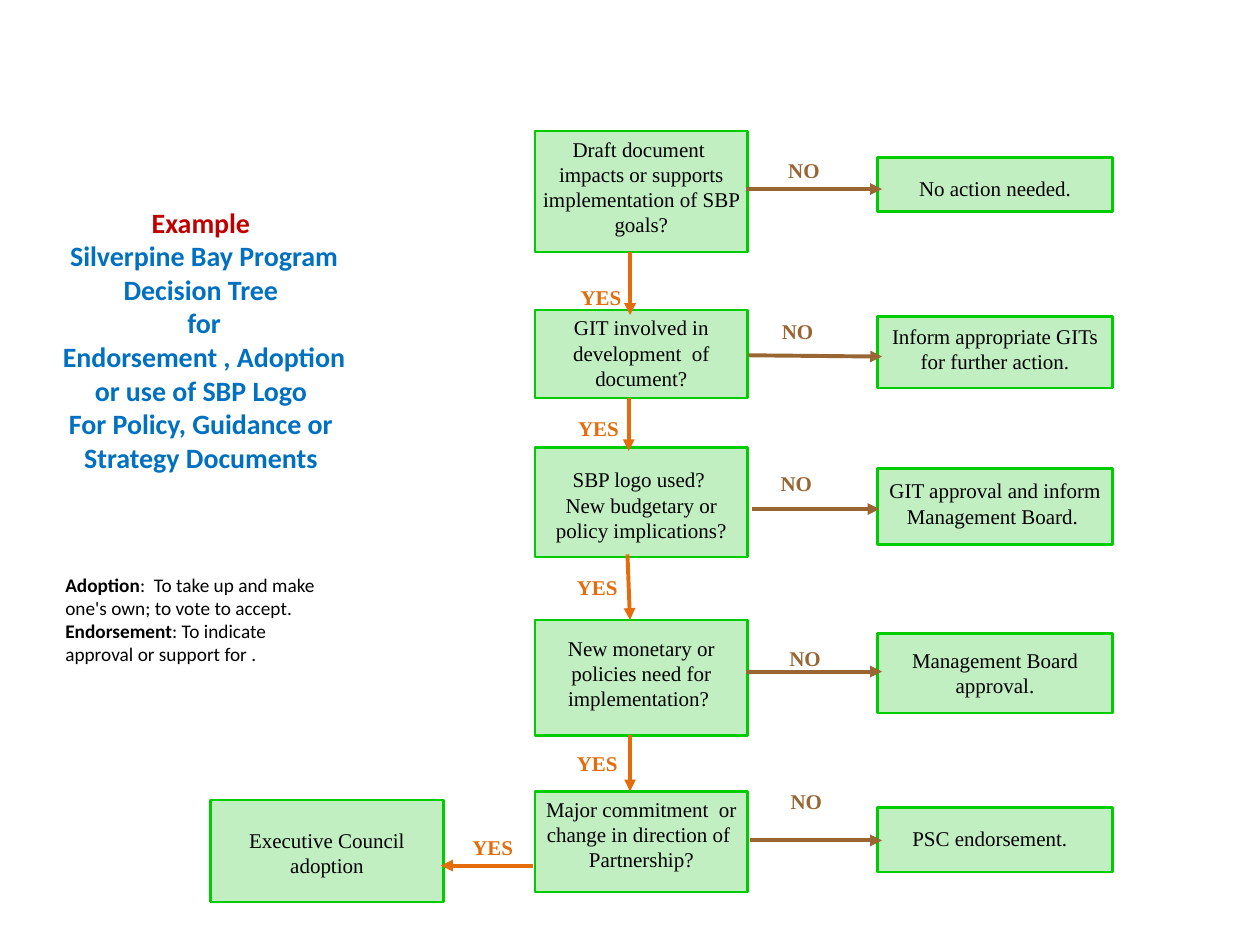
import dataclasses
import pptx
import pptx.dml.color
import pptx.enum.shapes
import pptx.enum.text
import pptx.oxml
import pptx.oxml.ns
import pptx.util

COLUMNS, ROWS = 100, 75
SLIDE_WIDTH, SLIDE_HEIGHT = pptx.util.Inches(10), pptx.util.Inches(7.5)


@dataclasses.dataclass(frozen=True)
class Theme:
    fill: str = "33CC33"
    fill_alpha: int = 30
    border: str = "00CC00"
    ink: str = "000000"
    yes: str = "E46C0A"
    no: str = "996633"
    example: str = "C00000"
    title: str = "0070C0"
    chart_font: str = "Times New Roman"
    side_font: str = "Calibri"
    chart_size: float = 12
    title_size: float = 16
    note_size: float = 11
    border_width: float = 1.5
    arrow_width: float = 2.25
    inset: float = 0.04


THEME = Theme()
CENTER = pptx.enum.text.PP_ALIGN.CENTER
LEFT = pptx.enum.text.PP_ALIGN.LEFT
QUESTION_COLUMN, QUESTION_WIDTH = 42.45, 16.9
ANSWER_COLUMN, ANSWER_WIDTH = 69.65, 18.65
YES_COLUMN, FLOW_COLUMN = 45, 50
LABEL_WIDTH, LABEL_HEIGHT = 4.8, 3.5

QUESTIONS = [
    (10.4, 9.6, 0, ["Draft document ", "impacts or supports implementation of SBP goals?"]),
    (24.6, 7, 0, ["GIT involved in development  of document?"]),
    (35.5, 8.7, 7, ["SBP logo used? ", "New budgetary or policy implications?"]),
    (49.2, 9.2, 5, ["New monetary or policies need for implementation? "]),
    (62.8, 8, 0, ["Major commitment  or change in direction of ", "Partnership?"]),
]
ANSWERS = [
    (12.5, 4.3, 6, ["No action needed."]),
    (25.1, 5.7, 1, ["Inform appropriate GITs for further action."]),
    (37.2, 6, 2, ["GIT approval and inform Management Board. "]),
    (50.3, 6.3, 4, ["Management Board approval."]),
    (64.1, 5.1, 6, ["PSC endorsement.  "]),
]
NO_LABELS = [(61.4, 12.1), (60.9, 24.9), (60.8, 36.9), (61.5, 50.8), (61.6, 62.2)]
NO_ARROWS = [
    (59.2, 15, 70, 15),
    (59.4, 28.2, 70, 28.3),
    (59.7, 40.4, 69.8, 40.4),
    (59.2, 53.3, 70, 53.3),
    (59.5, 66.7, 70, 66.7),
]
YES_LABELS = [(45.3, 22.2), (45.1, 32.6), (YES_COLUMN, 45.2), (YES_COLUMN, 59.2), (36.7, 65.8)]
YES_ARROWS = [
    (FLOW_COLUMN, 20, FLOW_COLUMN, 25),
    (49.9, 31.6, 49.9, 35.8),
    (49.8, 44, FLOW_COLUMN, 49.2),
    (FLOW_COLUMN, 58.3, FLOW_COLUMN, 62.8),
    (42.3, 68.7, 35, 68.7),
]
TITLE_LINES = [
    "Example ",
    "Silverpine Bay Program",
    "Decision Tree ",
    " for ",
    "Endorsement , Adoption",
    "or use of SBP Logo ",
    "For Policy, Guidance or ",
    "Strategy Documents ",
]
DEFINITIONS = [
    ("Adoption", ":  To take up and make one's own; to vote to accept."),
    ("Endorsement", ": To indicate approval or support for ."),
]


def grid(column, row):
    return round(SLIDE_WIDTH * column / COLUMNS), round(SLIDE_HEIGHT * row / ROWS)


def rgb(color):
    return pptx.dml.color.RGBColor.from_string(color)


def style_run(run, font, size, color, bold=False):
    run.font.name = font
    run.font.size = pptx.util.Pt(size)
    run.font.color.rgb = rgb(color)
    run.font.bold = bold


def set_insets(frame, lead=0):
    side = pptx.util.Inches(THEME.inset)
    frame.margin_left = frame.margin_right = frame.margin_bottom = side
    frame.margin_top = side + pptx.util.Pt(lead * 1.2)


def write_lines(frame, lines, font, size, color, bold=False):
    frame.word_wrap = True
    frame.vertical_anchor = pptx.enum.text.MSO_ANCHOR.TOP
    frame.text = "\n".join(lines)
    for paragraph in frame.paragraphs:
        paragraph.alignment = CENTER
        for run in paragraph.runs:
            style_run(run, font, size, color, bold)


def add_box(slide, column, width, row, height, lead, lines):
    box = slide.shapes.add_shape(
        pptx.enum.shapes.MSO_SHAPE.RECTANGLE, *grid(column, row), *grid(width, height)
    )
    box.shadow.inherit = False
    box.fill.solid()
    box.fill.fore_color.rgb = rgb(THEME.fill)
    tint = box.fill._xPr.find(".//" + pptx.oxml.ns.qn("a:srgbClr"))
    alpha = pptx.oxml.parse_xml(
        f'<a:alpha {pptx.oxml.ns.nsdecls("a")} val="{THEME.fill_alpha * 1000}"/>'
    )
    tint.append(alpha)
    box.line.color.rgb = rgb(THEME.border)
    box.line.width = pptx.util.Pt(THEME.border_width)
    set_insets(box.text_frame, lead)
    write_lines(box.text_frame, lines, THEME.chart_font, THEME.chart_size, THEME.ink)


def add_label(slide, column, row, word, color):
    label = slide.shapes.add_textbox(*grid(column, row), *grid(LABEL_WIDTH, LABEL_HEIGHT))
    set_insets(label.text_frame)
    write_lines(label.text_frame, [word], THEME.chart_font, THEME.chart_size, color, True)


def add_arrow(slide, start_column, start_row, end_column, end_row, color):
    arrow = slide.shapes.add_connector(
        pptx.enum.shapes.MSO_CONNECTOR.STRAIGHT,
        *grid(start_column, start_row),
        *grid(end_column, end_row),
    )
    arrow.line.color.rgb = rgb(color)
    arrow.line.width = pptx.util.Pt(THEME.arrow_width)
    namespace = pptx.oxml.ns.nsdecls("a")
    arrow.line._get_or_add_ln().append(
        pptx.oxml.parse_xml(f'<a:tailEnd {namespace} type="triangle"/>')
    )
    arrow._element.spPr.append(pptx.oxml.parse_xml(f"<a:effectLst {namespace}/>"))


def add_title(slide):
    title = slide.shapes.add_textbox(*grid(3.3, 15.8), *grid(25.8, 22.6))
    write_lines(
        title.text_frame, TITLE_LINES, THEME.side_font, THEME.title_size, THEME.title, True
    )
    title.text_frame.paragraphs[0].runs[0].font.color.rgb = rgb(THEME.example)


def add_definitions(slide):
    definitions = slide.shapes.add_textbox(*grid(4.2, 45), *grid(23.3, 8.4))
    frame = definitions.text_frame
    frame.word_wrap = True
    frame.text = "\n".join(term for term, meaning in DEFINITIONS)
    for paragraph, (term, meaning) in zip(frame.paragraphs, DEFINITIONS):
        paragraph.alignment = LEFT
        paragraph.add_run().text = meaning
        for run, bold in zip(paragraph.runs, (True, False)):
            style_run(run, THEME.side_font, THEME.note_size, THEME.ink, bold)


def main():
    deck = pptx.Presentation()
    deck.slide_width, deck.slide_height = SLIDE_WIDTH, SLIDE_HEIGHT
    slide = deck.slides.add_slide(deck.slide_layouts[6])
    for question in QUESTIONS:
        add_box(slide, QUESTION_COLUMN, QUESTION_WIDTH, *question)
    for answer in ANSWERS:
        add_box(slide, ANSWER_COLUMN, ANSWER_WIDTH, *answer)
    add_box(slide, 16.7, 18.5, 63.5, 8.1, 10.5, ["Executive Council", "adoption"])
    for word, color, labels, arrows in (
        ("NO", THEME.no, NO_LABELS, NO_ARROWS),
        ("YES", THEME.yes, YES_LABELS, YES_ARROWS),
    ):
        for label, arrow in zip(labels, arrows):
            add_arrow(slide, *arrow, color)
            add_label(slide, *label, word, color)
    add_title(slide)
    add_definitions(slide)
    deck.save("out.pptx")


if __name__ == "__main__":
    main()
